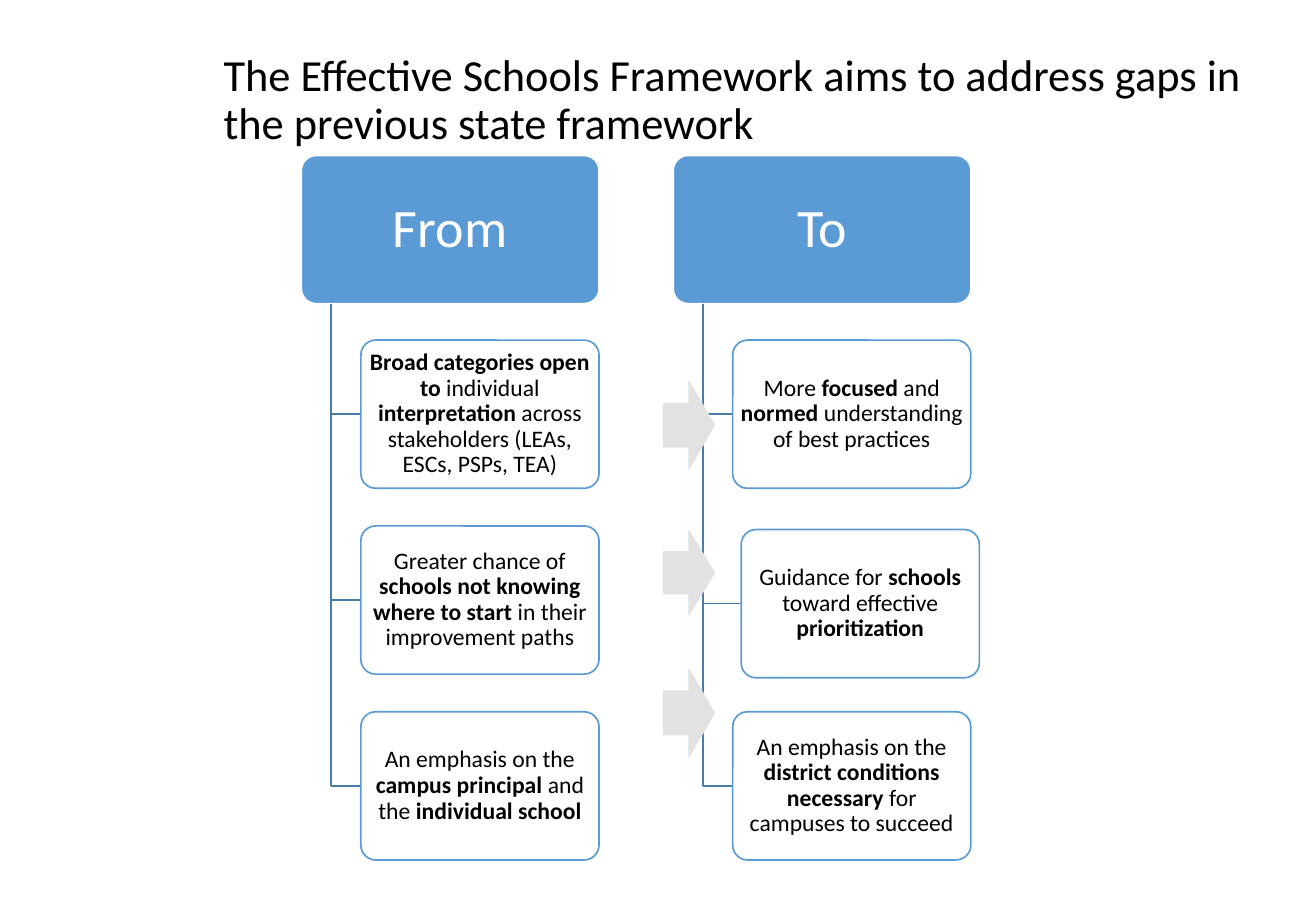
import dataclasses
import typing

import lxml.etree
import pptx
import pptx.dml.color
import pptx.enum.shapes
import pptx.enum.text
import pptx.oxml.ns
import pptx.util

Inches = pptx.util.Inches
Shape = pptx.enum.shapes.MSO_SHAPE
Align = pptx.enum.text.PP_ALIGN
Anchor = pptx.enum.text.MSO_ANCHOR


@dataclasses.dataclass(frozen=True)
class Theme:
    font: str = "Calibri"
    blue: str = "5B9BD5"
    branch: str = "497CAB"
    arrow: str = "E2E2E2"
    white: str = "FFFFFF"
    black: str = "000000"
    title: float = 26.3
    head: float = 32
    body: float = 14


@dataclasses.dataclass(frozen=True)
class Card:
    text: str
    right: float = 0
    down: float = 0


@dataclasses.dataclass(frozen=True)
class Column:
    left: float
    head: str
    cards: tuple[Card, ...]


@dataclasses.dataclass(frozen=True)
class Arrow:
    top: float
    height: float


THEME = Theme()
HEAD_TOP, HEAD_WIDTH, HEIGHT = 1.28, 2.45, 1.22
CARD_TOP, CARD_WIDTH, STEP = 2.8, 1.96, 1.53
INDENT = HEAD_WIDTH / 5

COLUMNS = (
    Column(2.48, "From", (
        Card("*Broad categories open to* individual *interpretation* across "
             "stakeholders (LEAs, ESCs, PSPs, TEA)"),
        Card("Greater chance of *schools not knowing where to start* in their "
             "improvement paths"),
        Card("An emphasis on the *campus principal* and the *individual school*"),
    )),
    Column(5.54, "To", (
        Card("More *focused* and *normed* understanding of best practices"),
        Card("Guidance for *schools* toward effective *prioritization*", 0.07, 0.03),
        Card("An emphasis on the *district conditions necessary* for campuses "
             "to succeed"),
    )),
)
ARROWS = (Arrow(3.14, 0.72), Arrow(4.37, 0.69), Arrow(5.51, 0.72))


def color(code: str) -> pptx.dml.color.RGBColor:
    return pptx.dml.color.RGBColor.from_string(code)


def paint(shape: typing.Any, fill: str | None, line: str, width: float = 1) -> None:
    shape.shadow.inherit = False
    if fill is None:
        shape.fill.background()
    else:
        shape.fill.solid()
        shape.fill.fore_color.rgb = color(fill)
    shape.line.color.rgb = color(line)
    shape.line.width = pptx.util.Pt(width)


def write(shape: typing.Any, text: str, size: float, ink: str, align: Align) -> None:
    frame = shape.text_frame
    frame.word_wrap = True
    frame.auto_size = pptx.enum.text.MSO_AUTO_SIZE.NONE
    frame.vertical_anchor = Anchor.MIDDLE
    para = frame.paragraphs[0]
    para.alignment = align
    para.line_spacing = 0.9
    para.font.name = THEME.font
    para.font.size = pptx.util.Pt(size)
    para.font.color.rgb = color(ink)
    for index, part in enumerate(text.split("*")):
        if part:
            run = para.add_run()
            run.text = part
            if index % 2:
                run.font.bold = True


def add_box(slide: typing.Any, left: float, top: float, width: float,
            fill: str, line: str, inset: float) -> typing.Any:
    box = slide.shapes.add_shape(Shape.ROUNDED_RECTANGLE, Inches(left), Inches(top),
                                 Inches(width), Inches(HEIGHT))
    box.adjustments[0] = 0.1
    paint(box, fill, line)
    frame = box.text_frame
    frame.margin_left = frame.margin_right = Inches(inset)
    frame.margin_top = frame.margin_bottom = Inches(inset * 0.6)
    return box


def add_branch(slide: typing.Any, trunk: float, left: float, middle: float) -> None:
    start = HEAD_TOP + HEIGHT
    path = slide.shapes.build_freeform(Inches(trunk), Inches(start))
    path.add_line_segments([(Inches(trunk), Inches(middle)),
                            (Inches(left), Inches(middle))], close=False)
    paint(path.convert_to_shape(), None, THEME.branch)


def add_card(slide: typing.Any, card: Card, left: float, top: float) -> None:
    box = add_box(slide, left, top, CARD_WIDTH, THEME.white, THEME.blue, 0.03)
    tone = box.fill._xPr.find(".//" + pptx.oxml.ns.qn("a:srgbClr"))
    lxml.etree.SubElement(tone, pptx.oxml.ns.qn("a:alpha"), val="90000")
    write(box, card.text, THEME.body, THEME.black, Align.CENTER)


def add_column(slide: typing.Any, column: Column) -> None:
    head = add_box(slide, column.left, HEAD_TOP, HEAD_WIDTH, THEME.blue, THEME.white, 0.07)
    write(head, column.head, THEME.head, THEME.white, Align.CENTER)
    for row, card in enumerate(column.cards):
        left = column.left + INDENT + card.right
        top = CARD_TOP + row * STEP + card.down
        add_branch(slide, column.left + INDENT / 2, left, top + HEIGHT / 2)
        add_card(slide, card, left, top)


def add_arrow(slide: typing.Any, arrow: Arrow) -> None:
    shape = slide.shapes.add_shape(Shape.RIGHT_ARROW, Inches(5.46), Inches(arrow.top),
                                   Inches(0.42), Inches(arrow.height))
    paint(shape, THEME.arrow, THEME.arrow, 0.75)


def main() -> None:
    deck = pptx.Presentation()
    deck.slide_width, deck.slide_height = Inches(10.83), Inches(7.5)
    slide = deck.slides.add_slide(deck.slide_layouts[5])
    title = slide.shapes.title
    title.left, title.top = Inches(1.74), Inches(0.41)
    title.width, title.height = Inches(8.76), Inches(0.84)
    write(title, "The Effective Schools Framework aims to address gaps in the "
          "previous state framework", THEME.title, THEME.black, Align.LEFT)
    for column in COLUMNS:
        add_column(slide, column)
    for arrow in ARROWS:
        add_arrow(slide, arrow)
    deck.save("out.pptx")


if __name__ == "__main__":
    main()
